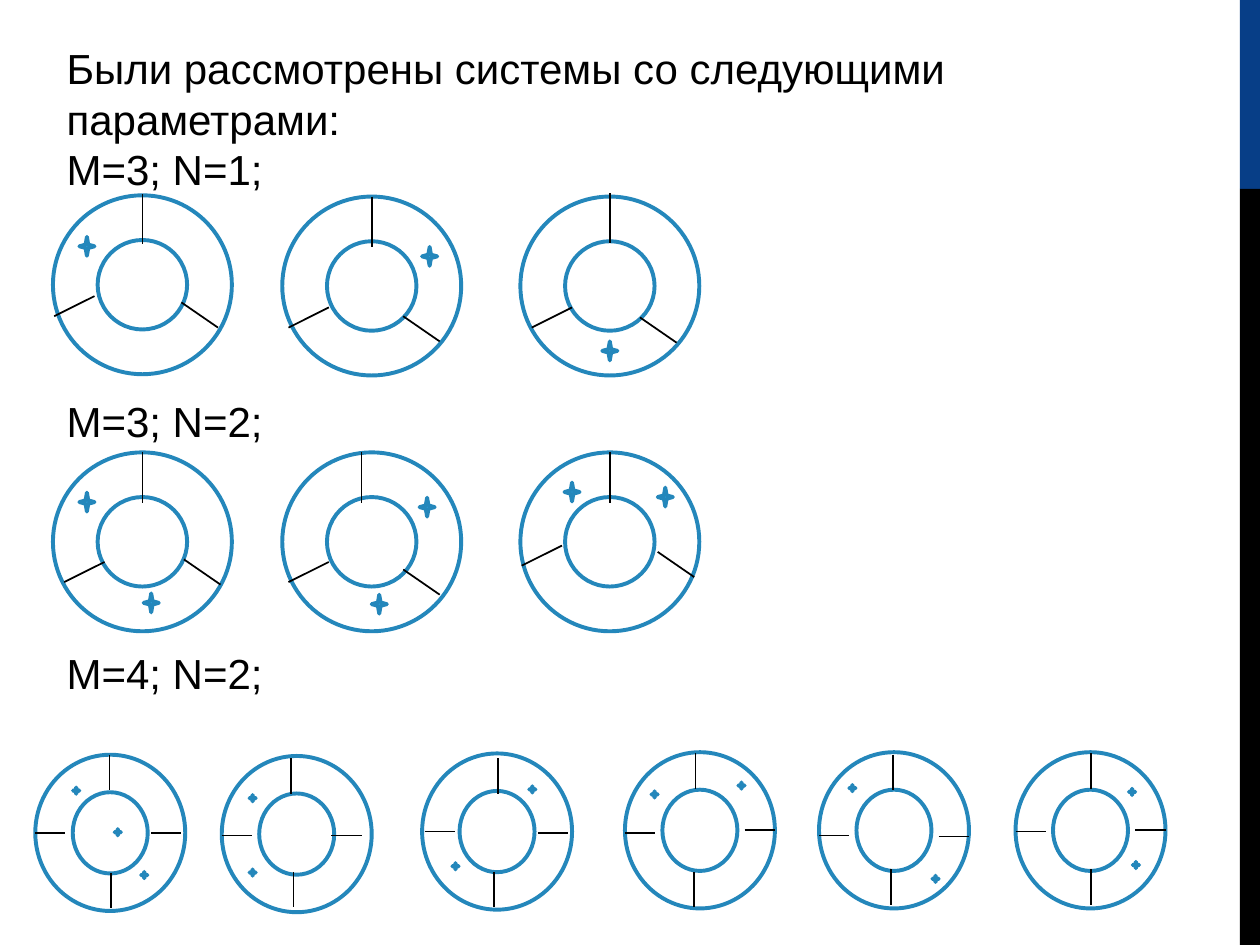
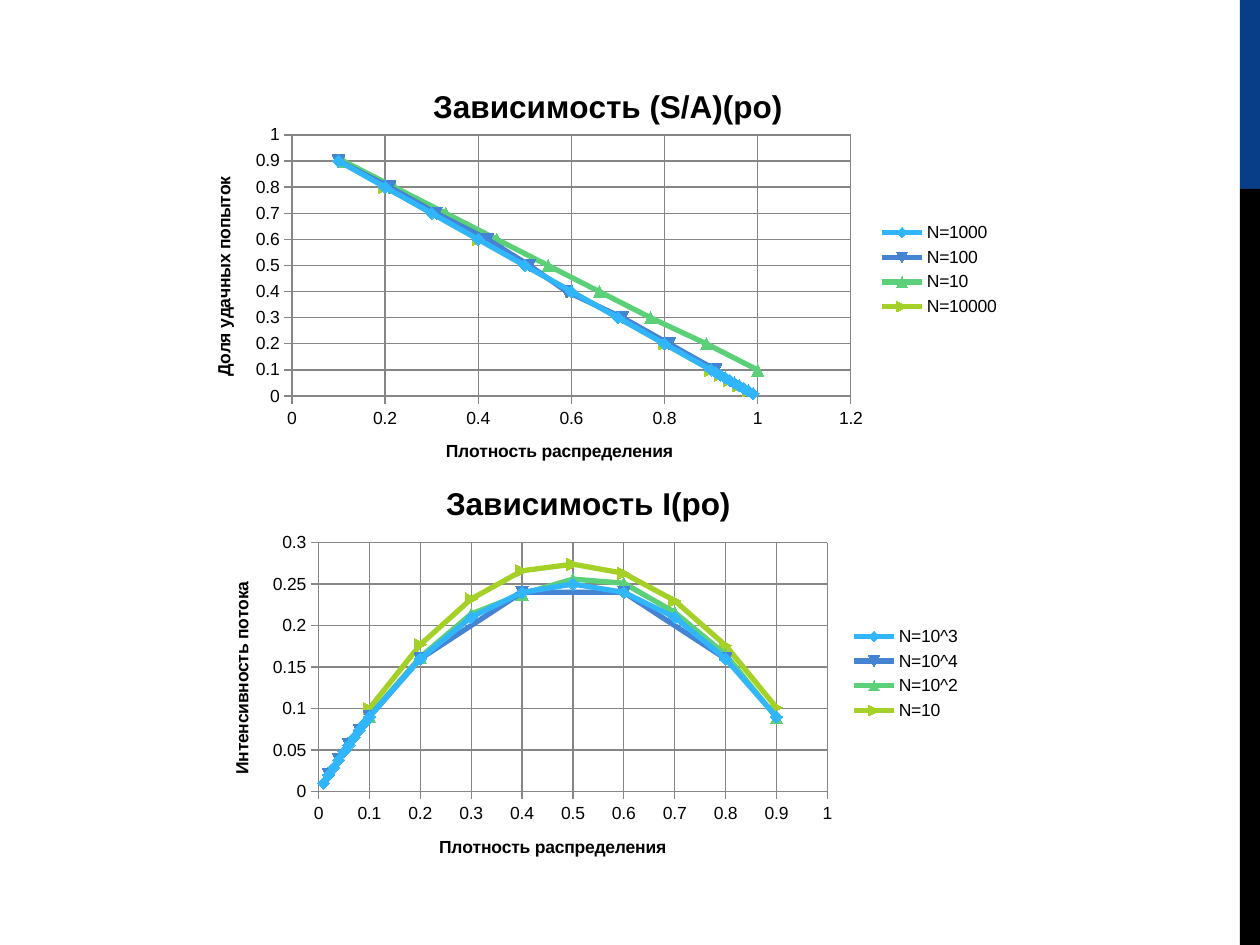
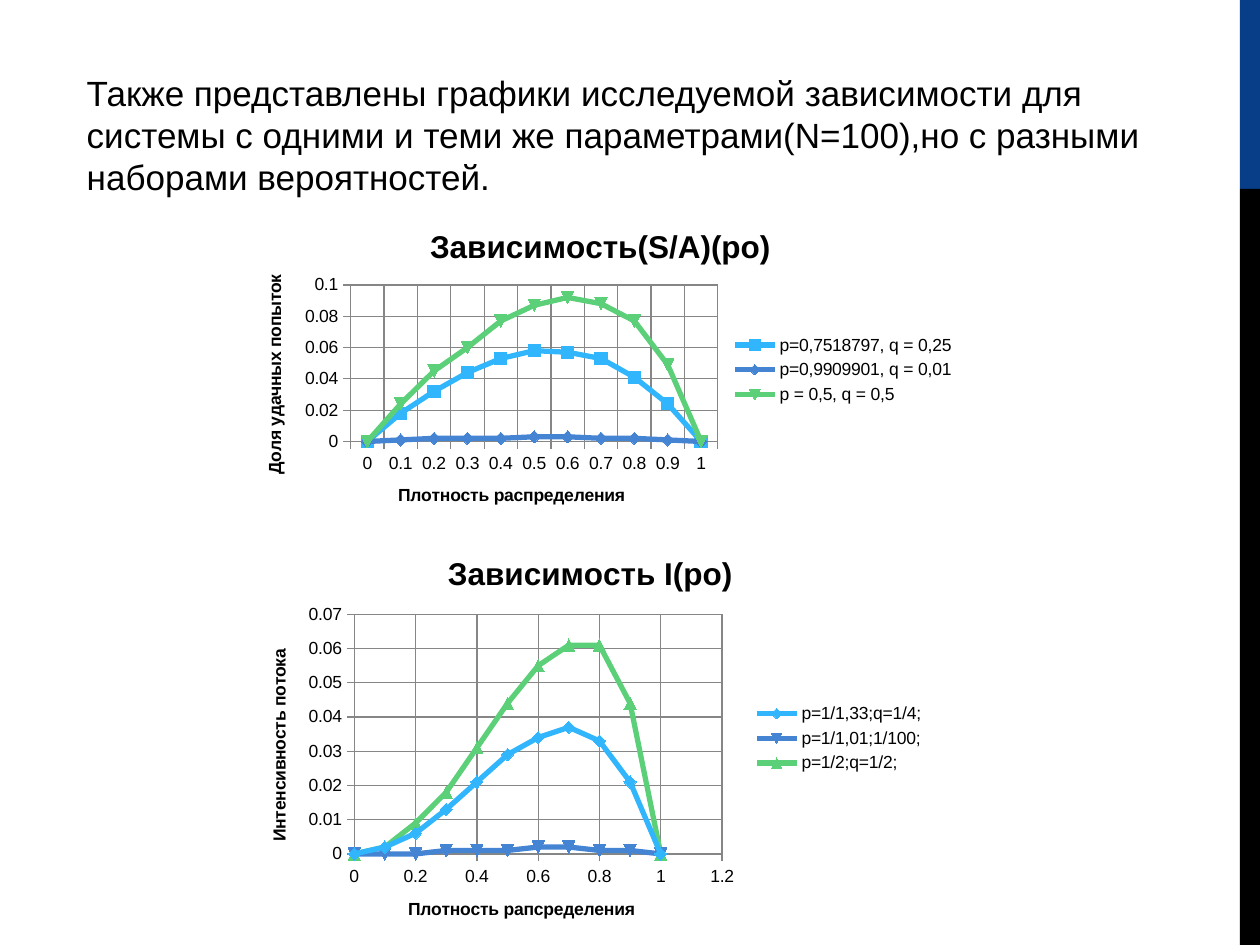
from lxml import etree
from pptx import Presentation
from pptx.chart.data import CategoryChartData as CatData, XyChartData as XyData
from pptx.dml.color import RGBColor as Rgb
from pptx.enum.chart import XL_CHART_TYPE as Kind, XL_LEGEND_POSITION as Legend
from pptx.enum.chart import XL_MARKER_STYLE as Marker, XL_TICK_MARK as Tick
from pptx.enum.shapes import MSO_CONNECTOR as Link, MSO_SHAPE as Form
from pptx.oxml.ns import qn
from pptx.util import Inches, Pt

BLACK, NAVY, RING, SKY, GRID = "000000", "073E87", "2487BB", "31B6FD", "868686"
HUES = [SKY, "4584D3", "5BD078", "A5D028"]

TENTHS = [n / 10 for n in range(1, 10)]
FULL = [n / 10 for n in range(11)]
DENSE = [n / 100 for n in range(1, 10)] + TENTHS
SPARSE = [0.02, 0.04, 0.06, 0.08, 0.1, 0.2, 0.4, 0.6, 0.8]

RINGS = [
    ((1.42, 1.42), [(0.42, 1.55), (2.24, 1.56), (4.13, 1.56),
                    (0.42, 3.59), (2.24, 3.59), (4.13, 3.59)]),
    ((1.19, 1.24), [(0.28, 5.99), (1.76, 6), (3.35, 5.98),
                    (4.96, 5.97), (6.5, 5.97), (8.06, 5.97)]),
]
SPOKES = [
    ((0, 0.4), [(1.13, 1.54), (2.95, 1.56), (4.84, 1.53),
                (1.13, 3.59), (2.87, 3.59), (4.84, 3.59)]),
    ((-0.32, 0.16), [(0.75, 2.35), (2.61, 2.44), (4.54, 2.44),
                     (0.83, 4.46), (2.61, 4.46), (4.46, 4.33)]),
    ((0.29, 0.2), [(1.44, 2.4), (3.2, 2.51), (5.08, 2.52),
                   (1.46, 4.44), (3.2, 4.52), (5.22, 4.38)]),
    ((0, 0.28), [(0.87, 5.99), (2.31, 6.02), (3.95, 6.02),
                 (5.52, 5.98), (7.09, 5.99), (8.66, 5.98),
                 (0.88, 6.93), (2.33, 6.92), (3.92, 6.92),
                 (5.51, 6.92), (7.07, 6.9), (8.66, 6.9)]),
    ((0.24, 0), [(0.28, 6.61), (1.76, 6.63), (3.37, 6.6),
                 (4.96, 6.61), (6.5, 6.63), (8.06, 6.6),
                 (1.2, 6.61), (2.63, 6.63), (4.27, 6.61),
                 (5.91, 6.59), (7.45, 6.64), (9.01, 6.59)]),
]
STARS = [
    ((0.12, 0.15), [(0.63, 1.88), (3.35, 1.96), (4.78, 2.71),
                    (0.63, 3.91), (1.14, 4.71), (3.33, 3.95),
                    (2.95, 4.72), (4.48, 3.83), (5.22, 3.87)]),
    ((0.05, 0.05), [(0.58, 6.25), (0.91, 6.58), (1.12, 6.92),
                    (1.98, 6.31), (1.98, 6.9), (4.2, 6.24), (3.59, 6.85),
                    (5.86, 6.21), (5.17, 6.28), (6.74, 6.23),
                    (7.4, 6.95), (8.96, 6.26), (8.99, 6.84)]),
]


def tint(code):
    return Rgb.from_string(code)


def apply(target, values):
    for name, value in values.items():
        setattr(target, name, value)


def rest(values):
    return [round(1 - v, 2) for v in values]


class Deck:
    font = "Arial"

    def __init__(self):
        self.prs = Presentation()
        apply(self.prs, {"slide_width": Inches(10), "slide_height": Inches(7.5)})
        self.slide = None

    def page(self):
        self.slide = self.prs.slides.add_slide(self.prs.slide_layouts[6])

    def bands(self):
        tree = self.prs.slide_master.shapes.element
        for top, tall, fill in [(0, 1.5, NAVY), (1.5, 6, BLACK)]:
            tree.append(self.shape(Form.RECTANGLE, (9.84, top, 0.16, tall), fill).element)

    def style(self, font, size, bold=False):
        apply(font, {"name": self.font, "size": Pt(size), "bold": bold})
        font.color.rgb = tint(BLACK)

    def stroke(self, line, color, width):
        line.color.rgb = tint(color)
        line.width = Pt(width)

    def shape(self, form, box, fill, edge=None):
        item = self.slide.shapes.add_shape(form, *map(Inches, box))
        item.shadow.inherit = False
        item.fill.solid()
        item.fill.fore_color.rgb = tint(fill)
        if edge:
            self.stroke(item.line, edge, 2.25)
        else:
            item.line.fill.background()
        return item

    def line(self, start, step):
        end = [a + b for a, b in zip(start, step)]
        item = self.slide.shapes.add_connector(Link.STRAIGHT, *map(Inches, [*start, *end]))
        self.stroke(item.line, BLACK, 1)
        etree.SubElement(item.element.spPr, qn("a:effectLst"))

    def text(self, box, size, lines):
        frame = self.slide.shapes.add_textbox(*map(Inches, box)).text_frame
        frame.word_wrap = True
        for i, (words, gap) in enumerate(lines):
            para = frame.add_paragraph() if i else frame.paragraphs[0]
            apply(para, {"line_spacing": Pt(size * 1.2), "space_before": Pt(gap)})
            run = para.add_run()
            run.text = words
            self.style(run.font, size)

    def label(self, title, words, size):
        title.text_frame.text = words
        self.style(title.text_frame.paragraphs[0].runs[0].font, size, True)

    def axis(self, axis, words, scale):
        apply(axis, {"has_major_gridlines": True, "has_minor_gridlines": False,
                     "major_tick_mark": Tick.OUTSIDE, "minor_tick_mark": Tick.NONE})
        if scale:
            top, unit = scale
            apply(axis, {"minimum_scale": 0, "maximum_scale": top, "major_unit": unit})
        apply(axis.tick_labels, {"number_format": "General", "number_format_is_linked": False})
        for line in (axis.format.line, axis.major_gridlines.format.line):
            self.stroke(line, GRID, 0.75)
        self.label(axis.axis_title, words, 10)

    def place(self, chart, plot):
        area = chart.element.find(".//" + qn("c:plotArea"))
        for old in area.findall(qn("c:layout")):
            area.remove(old)
        layout = etree.Element(qn("c:layout"))
        area.insert(0, layout)
        manual = etree.SubElement(layout, qn("c:manualLayout"))
        pairs = [("layoutTarget", "inner"), ("xMode", "edge"), ("yMode", "edge"),
                 *zip("xywh", plot)]
        for name, value in pairs:
            etree.SubElement(manual, qn("c:" + name)).set("val", str(value))

    def chart(self, box, plot, title, names, scales, series, cats=None):
        data = CatData() if cats else XyData()
        if cats:
            data.categories = cats
        for name, values, *xs in series:
            if cats:
                data.add_series(name, values)
            else:
                row = data.add_series(name)
                for x, y in zip(xs[0], values):
                    row.add_data_point(x, y)
        kind = Kind.LINE_MARKERS if cats else Kind.XY_SCATTER_LINES
        chart = self.slide.shapes.add_chart(kind, *map(Inches, box), data).chart
        self.style(chart.font, 10)
        apply(chart, {"has_title": True, "has_legend": True})
        apply(chart.legend, {"position": Legend.RIGHT, "include_in_layout": False})
        self.label(chart.chart_title, title, 18)
        axes = chart.category_axis, chart.value_axis
        for axis, words, scale in zip(axes, names, scales):
            self.axis(axis, words, scale)
        body = axes[1].axis_title.element.find(".//" + qn("a:bodyPr"))
        for key, value in {"rot": "-5400000", "vert": "horz"}.items():
            body.set(key, value)
        chart.plots[0].vary_by_categories = False
        for row, hue in zip(chart.plots[0].series, HUES):
            self.stroke(row.format.line, hue, 3)
            apply(row.marker, {"style": Marker.AUTOMATIC, "size": 7})
            row.marker.format.fill.solid()
            row.marker.format.fill.fore_color.rgb = tint(hue)
            row.marker.format.line.color.rgb = tint(hue)
            if cats:
                row.smooth = False
        if not cats:
            for i, tag in enumerate(chart.element.iter(qn("c:idx")), 1):
                tag.set("val", str(i))
        self.place(chart, plot)


def main():
    deck = Deck()
    dense_x, share, flow = "Плотность распределения", "Доля удачных попыток", "Интенсивность потока"

    deck.page()
    deck.bands()
    deck.text((0.43, 0.29, 8.82, 5.35), 24, [
        ("Были рассмотрены системы со следующими параметрами:", 0),
        ("М=3; N=1;", 0), ("M=3; N=2;", 115.2), ("M=4; N=2;", 115.2)])
    for size, spots in RINGS:
        for spot in spots:
            deck.shape(Form.DONUT, spot + size, "FFFFFF", RING)
    for step, starts in SPOKES:
        for start in starts:
            deck.line(start, step)
    for size, spots in STARS:
        for spot in spots:
            deck.shape(Form.STAR_4_POINT, spot + size, SKY, RING)

    deck.page()
    deck.chart(
        (1.61, 0.52, 6.43, 3.24), (0.11, 0.17, 0.69, 0.64),
        "Зависимость (S/A)(po)", (dense_x, share), ((1.2, 0.2), (1, 0.1)), [
            ("N=1000", DENSE, rest(DENSE)),
            ("N=100", TENTHS, [0.91, 0.81, 0.71, 0.59, 0.51, 0.42, 0.31, 0.21, 0.1]),
            ("N=10", TENTHS, [1, 0.89, 0.77, 0.66, 0.55, 0.44, 0.33, 0.22, 0.11]),
            ("N=10000", SPARSE, rest(SPARSE))])
    deck.chart(
        (1.61, 3.67, 6.12, 3.35), (0.15, 0.19, 0.66, 0.59),
        "Зависимость I(po)", (dense_x, flow), ((1, 0.1), (0.3, 0.05)), [
            ("N=10^3", [0.01, 0.02, 0.029, 0.038, 0.048, 0.056, 0.065, 0.074, 0.082,
                        0.09, 0.16, 0.21, 0.24, 0.25, 0.24, 0.21, 0.16, 0.09], DENSE),
            ("N=10^4", [0.02, 0.038, 0.056, 0.074, 0.09, 0.16, 0.24, 0.24, 0.16], SPARSE),
            ("N=10^2", [0.091, 0.162, 0.214, 0.238, 0.256, 0.251, 0.216, 0.165, 0.089], TENTHS),
            ("N=10", [0.1, 0.177, 0.232, 0.266, 0.274, 0.263, 0.23, 0.176, 0.101], TENTHS)])

    deck.page()
    deck.text((0.59, 0.52, 8.66, 1.11), 20, [
        ("Также представлены графики исследуемой зависимости для системы с одними и теми же "
         "параметрами(N=100),но с разными наборами вероятностей.", 0)])
    deck.chart(
        (1.85, 1.64, 5.83, 2.59), (0.16, 0.24, 0.5, 0.48),
        "Зависимость(S/A)(po)", (dense_x, share), (None, (0.1, 0.02)), [
            ("p=0,7518797, q = 0,25",
             [0, 0.018, 0.032, 0.044, 0.053, 0.058, 0.057, 0.053, 0.041, 0.024, 0]),
            ("p=0,9909901, q = 0,01",
             [0, 0.001, 0.002, 0.002, 0.002, 0.003, 0.003, 0.002, 0.002, 0.001, 0]),
            ("p = 0,5, q = 0,5",
             [0, 0.024, 0.045, 0.06, 0.077, 0.087, 0.092, 0.088, 0.077, 0.049, 0])],
        [f"{n:g}" for n in FULL])
    deck.chart(
        (1.93, 4.22, 5.51, 3.28), (0.16, 0.2, 0.53, 0.58),
        "Зависимость I(po)", ("Плотность рапсределения", flow), ((1.2, 0.2), (0.07, 0.01)), [
            ("p=1/1,33;q=1/4;",
             [0, 0.002, 0.006, 0.013, 0.021, 0.029, 0.034, 0.037, 0.033, 0.021, 0], FULL),
            ("p=1/1,01;1/100;",
             [0, 0, 0, 0.001, 0.001, 0.001, 0.002, 0.002, 0.001, 0.001, 0], FULL),
            ("p=1/2;q=1/2;",
             [0, 0.002, 0.009, 0.018, 0.031, 0.044, 0.055, 0.061, 0.061, 0.044, 0], FULL)])

    deck.prs.save("out.pptx")


if __name__ == "__main__":
    main()
